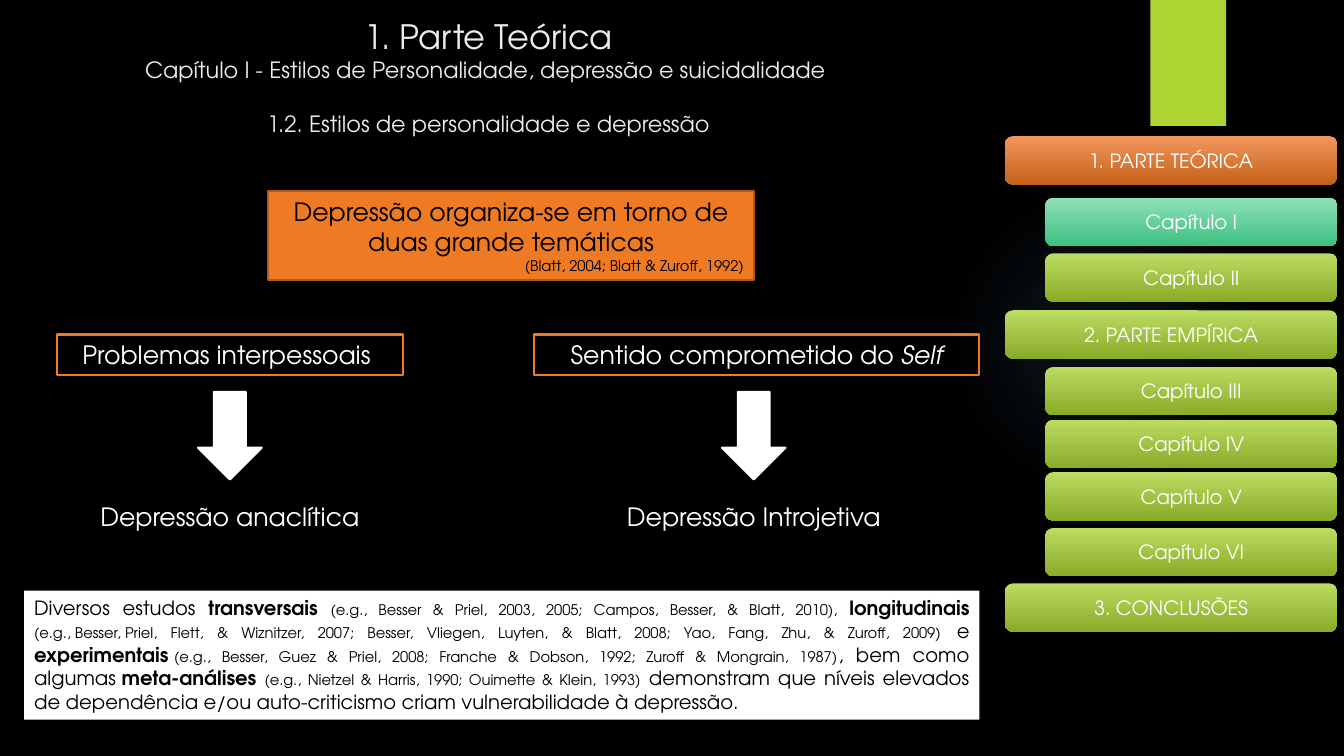
from lxml import etree
from pptx import Presentation
from pptx import util as u
from pptx.dml.color import RGBColor
from pptx.enum import shapes, text
from pptx.oxml import ns

Pt = u.Pt
KIND = shapes.MSO_SHAPE
ALIGN = text.PP_ALIGN
ANCHOR = text.MSO_ANCHOR


class Theme:
    face = "TeX Gyre Adventor"
    black, white, pale = "000000", "FFFFFF", "EBEBEB"
    lime, orange, rust, glow = "ACD433", "EF7A24", "B15A1B", "7AC4F0"
    warm = ("F2975F", "C56118")
    mint = ("8FE1B9", "3DC081")
    green = ("BCDC62", "8AAA29")
    head, sub, main, body, cite = 24, 16, 18, 14, 10.5


# Menu entries: label, top, is a chapter, gradient
MENU = [
    ("1. PARTE TEÓRICA", 97.2, False, Theme.warm),
    ("Capítulo I", 141.1, True, Theme.mint),
    ("Capítulo II", 180.9, True, Theme.green),
    ("2. PARTE EMPÍRICA", 221.6, False, Theme.green),
    ("Capítulo III", 262.1, True, Theme.green),
    ("Capítulo IV", 299.7, True, Theme.green),
    ("Capítulo V", 337.2, True, Theme.green),
    ("Capítulo VI", 377.1, True, Theme.green),
    ("3. CONCLUSÕES", 416.7, False, Theme.green),
]

# Study summary: text and style (n normal, b bold, c citation); ~ keeps words together
STUDIES = [
    ("Diversos estudos ", "n"),
    ("transversais ", "b"),
    ("(e.g., Besser & Priel, 2003, 2005; Campos, Besser, & Blatt, 2010), ", "c"),
    ("longitudinais ", "b"),
    ("(e.g.,~Besser,~Priel, Flett, & Wiznitzer, 2007; Besser, Vliegen, Luyten, "
     "& Blatt, 2008; Yao, Fang, Zhu, & Zuroff, 2009)", "c"),
    (" e ", "n"),
    ("experimentais~", "b"),
    ("(e.g., Besser, Guez & Priel, 2008; Franche & Dobson, 1992; "
     "Zuroff & Mongrain, 1987)", "c"),
    (", bem como algumas~", "n"),
    ("meta-análises ", "b"),
    ("(e.g., Nietzel & Harris, 1990; Ouimette & Klein, 1993)", "c"),
    (" demonstram que níveis elevados de~dependência e/ou auto-criticismo "
     "criam vulnerabilidade à depressão.", "n"),
]


def rgb(code):
    return RGBColor.from_string(code)


def style(para, size, color, align=ALIGN.CENTER):
    para.alignment = align
    para.font.name = Theme.face
    para.font.size = Pt(size)
    para.font.color.rgb = rgb(color)


def place(item, left, top, width, height):
    item.left, item.top = Pt(left), Pt(top)
    item.width, item.height = Pt(width), Pt(height)


def shape(slide, kind, area, fill=None, line=None):
    item = slide.shapes.add_shape(kind, *map(Pt, area))
    item.shadow.inherit = False
    if fill:
        item.fill.solid()
        item.fill.fore_color.rgb = rgb(fill)
    else:
        item.fill.background()
    if line:
        item.line.color.rgb = rgb(line)
        item.line.width = Pt(1.5)
    else:
        item.line.fill.background()
    frame = item.text_frame
    frame.word_wrap = True
    frame.vertical_anchor = ANCHOR.TOP
    return item


def glow(slide, area):
    """Soft round light that fades outwards."""
    item = shape(slide, KIND.OVAL, area, Theme.glow)
    props = item.fill._xPr
    props.remove(props.find(ns.qn("a:solidFill")))
    stops = "".join(
        f'<a:gs pos="{pos * 1000}"><a:srgbClr val="{Theme.glow}">'
        f'<a:alpha val="{alpha * 1000}"/></a:srgbClr></a:gs>'
        for pos, alpha in ((0, 7), (36, 6), (69, 0)))
    grad = etree.fromstring(
        f'<a:gradFill {ns.nsdecls("a")}><a:gsLst>{stops}</a:gsLst>'
        '<a:path path="circle"><a:fillToRect l="50000" t="50000" '
        'r="50000" b="50000"/></a:path></a:gradFill>')
    props.find(ns.qn("a:prstGeom")).addnext(grad)


def button(slide, label, top, inner, colors):
    left = 746.6 if inner else 717.8
    item = shape(slide, KIND.ROUNDED_RECTANGLE, (left, top, 955.4 - left, 34.6))
    item.fill.gradient()
    item.fill.gradient_angle = 270
    for stop, color in zip(item.fill.gradient_stops, colors):
        stop.color.rgb = rgb(color)
    item.text_frame.vertical_anchor = ANCHOR.MIDDLE
    para = item.text_frame.paragraphs[0]
    para.text = label
    style(para, Theme.body, Theme.white)


def box(slide, area, words, slant="", line=None):
    """White heading, framed if a line colour is given."""
    para = shape(slide, KIND.RECTANGLE, area, line=line).text_frame.paragraphs[0]
    para.add_run().text = words
    if slant:
        run = para.add_run()
        run.text = slant
        run.font.italic = True
    style(para, Theme.main, Theme.white)


def title(slide):
    item = slide.shapes.title
    place(item, 4.1, 7.9, 689.8, 123.8)
    frame = item.text_frame
    frame.word_wrap = True
    frame.auto_size = text.MSO_AUTO_SIZE.NONE
    frame.vertical_anchor = ANCHOR.TOP
    frame.text = ("1. Parte Teórica\n"
                  "Capítulo I - Estilos de Personalidade, depressão e suicidalidade \n"
                  "1.2. Estilos de personalidade e depressão")
    for para, size, gap in zip(frame.paragraphs,
                               (Theme.head, Theme.sub, Theme.sub), (0, 0, 19.3)):
        style(para, size, Theme.pale)
        para.space_before = Pt(gap)


def theme_box(slide):
    item = shape(slide, KIND.RECTANGLE, (191.5, 136.5, 347, 63.4),
                 Theme.orange, Theme.rust)
    frame = item.text_frame
    frame.text = ("Depressão organiza-se em torno de duas grande temáticas\n"
                  "(Blatt, 2004; Blatt & Zuroff, 1992)")
    claim, cite = frame.paragraphs
    style(claim, Theme.main, Theme.black)
    style(cite, Theme.cite, Theme.black, ALIGN.RIGHT)


def studies(slide):
    item = shape(slide, KIND.RECTANGLE, (17.3, 421.9, 682.4, 92.2), Theme.white)
    para = item.text_frame.paragraphs[0]
    style(para, Theme.body, Theme.black, ALIGN.JUSTIFY)
    for words, mark in STUDIES:
        run = para.add_run()
        run.text = words.replace("~", chr(160))
        run.font.size = Pt(Theme.cite if mark == "c" else Theme.body)
        run.font.bold = mark == "b"


def main():
    deck = Presentation()
    deck.slide_width, deck.slide_height = Pt(960), Pt(540)
    slide = deck.slides.add_slide(deck.slide_layouts[5])
    slide.background.fill.solid()
    slide.background.fill.fore_color.rgb = rgb(Theme.black)

    # Backdrop and menu
    glow(slide, (677.5, 131.8, 221.8, 221.8))
    shape(slide, KIND.RECTANGLE, (821.8, 0, 54, 90), Theme.lime)
    for entry in MENU:
        button(slide, *entry)

    # Heading and the two themes
    title(slide)
    theme_box(slide)
    box(slide, (40.6, 238.9, 247.4, 29.1), "Problemas interpessoais ",
        line=Theme.orange)
    box(slide, (381.6, 238.9, 317.9, 29.1), "Sentido comprometido do ", "Self",
        Theme.orange)
    for mid, kind in ((164.2, "anaclítica"), (538.4, "Introjetiva")):
        shape(slide, KIND.DOWN_ARROW, (mid - 22.7, 279.9, 45.4, 62.6),
              Theme.white, Theme.white)
        box(slide, (mid - 109.4, 354.2, 218.9, 29.1), f"Depressão {kind}")

    # Evidence
    studies(slide)
    deck.save("out.pptx")


if __name__ == "__main__":
    main()
